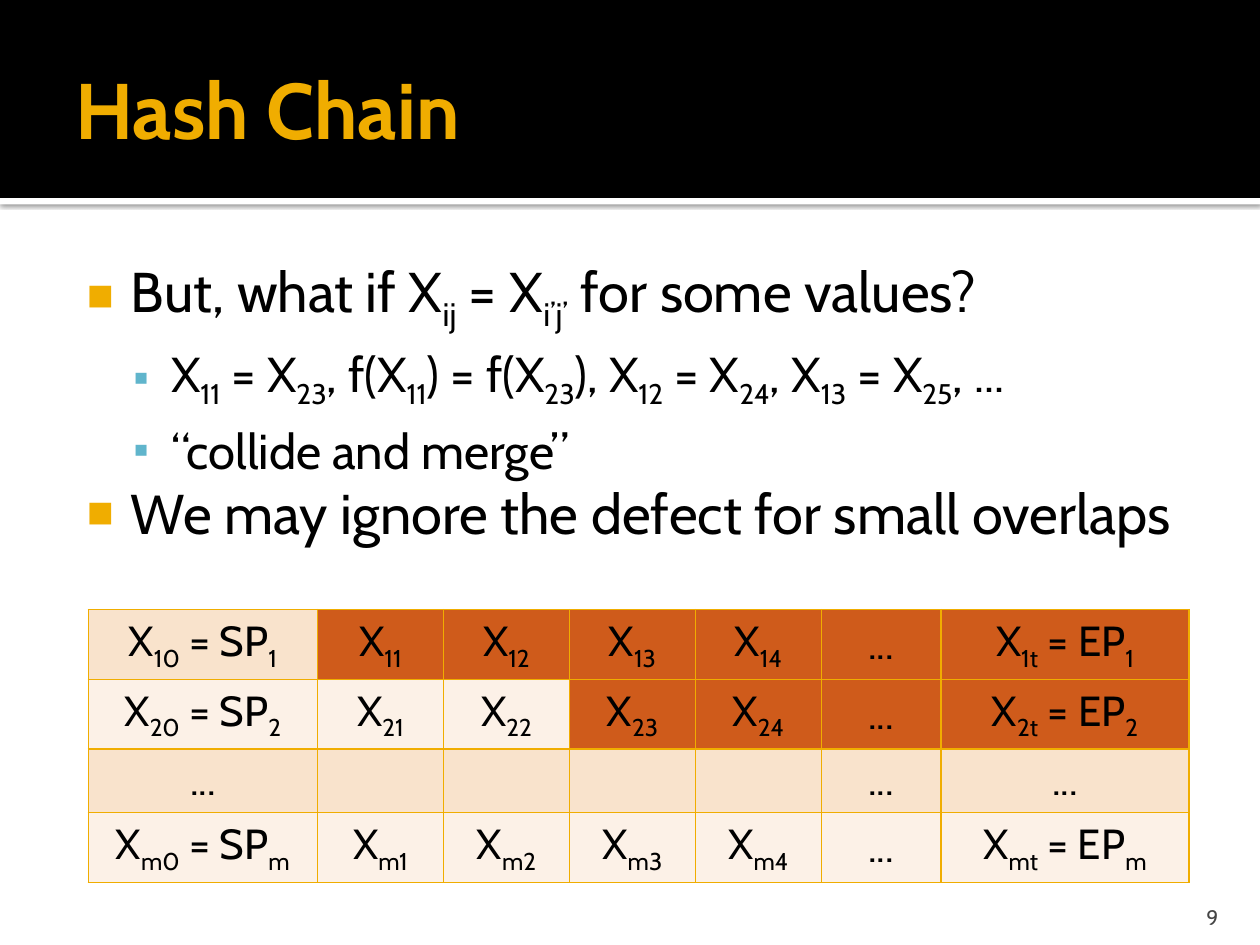
from lxml.etree import SubElement
from pptx import Presentation
from pptx.dml.color import RGBColor
from pptx.enum.shapes import MSO_SHAPE
from pptx.enum.text import MSO_ANCHOR, MSO_AUTO_SIZE, PP_ALIGN
from pptx.oxml import parse_xml
from pptx.oxml.ns import nsdecls, qn
from pptx.util import Cm, Pt

GOLD = RGBColor(0xF0, 0xAD, 0x00)
SKY = RGBColor(0x60, 0xB5, 0xCC)
BLACK = RGBColor(0, 0, 0)
WHITE = RGBColor(0xFF, 0xFF, 0xFF)
GREY = RGBColor(0x45, 0x45, 0x45)
PEACH = RGBColor(0xF9, 0xE3, 0xCC)
CREAM = RGBColor(0xFC, 0xF1, 0xE7)
RUST = RGBColor(0xCF, 0x5B, 0x1B)


def write(paragraph, text, size, color=BLACK, bold=False, align=PP_ALIGN.LEFT):
    """Fill a paragraph with text; parts in [brackets] become subscripts."""
    paragraph.alignment = align
    for i, part in enumerate(text.replace("]", "[").split("[")):
        if not part:
            continue
        run = paragraph.add_run()
        run.text = part
        run.font.name = "Cabin"
        run.font.size = Pt(size)
        run.font.bold = bold
        run.font.color.rgb = color
        if i % 2:
            run._r.get_or_add_rPr().set("baseline", "-25000")


def place(box, left, top, width, height, margins, anchor):
    """Set position, inner margins (left, top, right, bottom) and anchor, in cm."""
    box.left, box.top, box.width, box.height = map(Cm, (left, top, width, height))
    frame = box.text_frame
    frame.word_wrap = True
    frame.auto_size = MSO_AUTO_SIZE.NONE
    frame.vertical_anchor = anchor
    (frame.margin_left, frame.margin_top,
     frame.margin_right, frame.margin_bottom) = map(Cm, margins)
    return frame


prs = Presentation()
prs.slide_width, prs.slide_height = Cm(25.4), Cm(19.05)
slide = prs.slides.add_slide(prs.slide_layouts[1])
title, body = slide.placeholders

# Header band with a shadowed white rule below it
for top, height, color in ((3.99, 0.13, WHITE), (0, 3.99, BLACK)):
    band = slide.shapes.add_shape(MSO_SHAPE.RECTANGLE, 0, Cm(top), prs.slide_width, Cm(height))
    band.fill.solid()
    band.fill.fore_color.rgb = color
    band.line.fill.background()
    band.shadow.inherit = False
    title.element.addprevious(band.element)
    if color == WHITE:
        effects = band.element.spPr.find(qn("a:effectLst"))
        effects.append(parse_xml(
            f'<a:outerShdw {nsdecls("a")} blurRad="31750" dist="10160" dir="5400000">'
            '<a:srgbClr val="000000"><a:alpha val="60000"/></a:srgbClr></a:outerShdw>'))

heading = place(title, 1.27, 0.43, 22.86, 3.48, (0.25, 0.13, 0.13, 0.13), MSO_ANCHOR.MIDDLE)
write(heading.paragraphs[0], "Hash Chain", size=45, color=GOLD, bold=True)

# Bullet list: size, left margin, indent, space before, bullet, its colour and percent
LEVELS = (
    (32, 1.22, -0.89, 0, "■", GOLD, 80),
    (28, 2.03, -0.76, 20, "▪", SKY, 90),
)
points = (
    (0, "But, what if X[ij] = X[i’j’] for some values?"),
    (1, "X[11] = X[23], f(X[11]) = f(X[23]), X[12] = X[24], X[13] = X[25], ..."),
    (1, "“collide and merge”"),
    (0, "We may ignore the defect for small overlaps"),
)
bullets = place(body, 1.27, 4.93, 22.86, 12.85, (0.15, 0.25, 0.25, 0.13), MSO_ANCHOR.TOP)
for i, (level, text) in enumerate(points):
    size, margin, indent, gap, mark, mark_color, percent = LEVELS[level]
    point = bullets.add_paragraph() if i else bullets.paragraphs[0]
    point.level = level
    write(point, text, size=size)
    props = point._p.get_or_add_pPr()
    props.set("marL", str(Cm(margin)))
    props.set("indent", str(Cm(indent)))
    before = SubElement(props, qn("a:spcBef"))
    SubElement(before, qn("a:spcPct"), val=str(gap * 1000))
    bullet_color = SubElement(props, qn("a:buClr"))
    SubElement(bullet_color, qn("a:srgbClr"), val=str(mark_color))
    SubElement(props, qn("a:buSzPct"), val=str(percent * 1000))
    SubElement(props, qn("a:buFont"), typeface="Arial")
    SubElement(props, qn("a:buChar"), char=mark)

# Table of chains: from the collision on, cells are marked in rust
COLUMN_WIDTHS = (4.62, 2.54, 2.54, 2.54, 2.54, 2.41, 5.0)
COLLISION_START = {0: 1, 1: 3}


def chain(n):
    return [f"X[{n}0] = SP[{n}]", *(f"X[{n}{j}]" for j in range(1, 5)),
            "...", f"X[{n}t] = EP[{n}]"]


rows = [chain(1), chain(2), ["...", "", "", "", "", "...", "..."], chain("m")]
chains = slide.shapes.add_table(
    len(rows), len(COLUMN_WIDTHS), Cm(1.78), Cm(12.29), Cm(sum(COLUMN_WIDTHS)), Cm(4.88)).table
for column, width in zip(chains.columns, COLUMN_WIDTHS):
    column.width = Cm(width)
for r, row in enumerate(rows):
    for c, text in enumerate(row):
        cell = chains.cell(r, c)
        cell.vertical_anchor = MSO_ANCHOR.MIDDLE
        write(cell.text_frame.paragraphs[0], text, size=24, align=PP_ALIGN.CENTER)
        props = cell._tc.get_or_add_tcPr()
        for side in ("lnL", "lnR", "lnT", "lnB"):
            border = SubElement(props, qn(f"a:{side}"), w=str(Pt(1)))
            SubElement(SubElement(border, qn("a:solidFill")), qn("a:srgbClr"), val=str(GOLD))
        cell.fill.solid()
        collided = c >= COLLISION_START.get(r, len(row))
        cell.fill.fore_color.rgb = RUST if collided else (PEACH, CREAM)[r % 2]

page_number = slide.shapes.add_textbox(0, 0, 0, 0)
footer = place(page_number, 22.78, 17.98, 2.03, 0.76, (0.25, 0.13, 0.25, 0), MSO_ANCHOR.BOTTOM)
write(footer.paragraphs[0], "9", size=12, color=GREY, align=PP_ALIGN.RIGHT)

prs.save("out.pptx")
